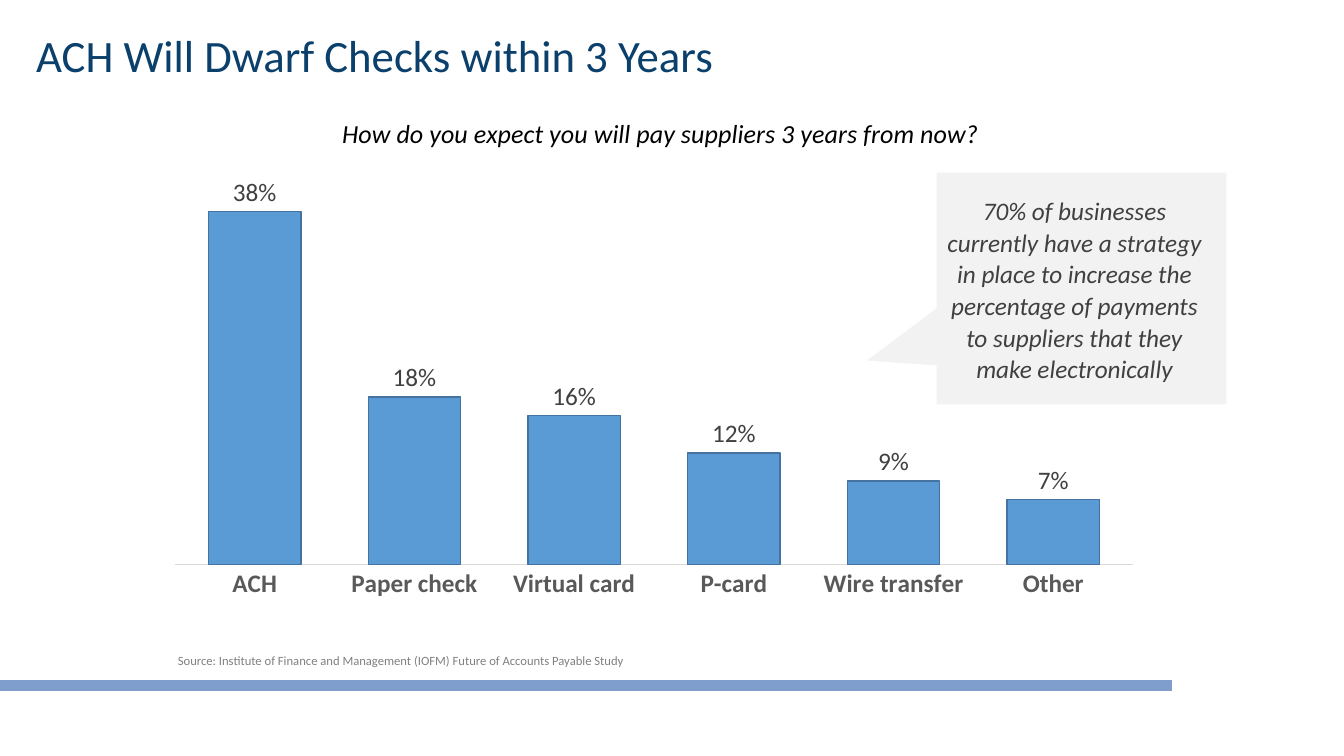
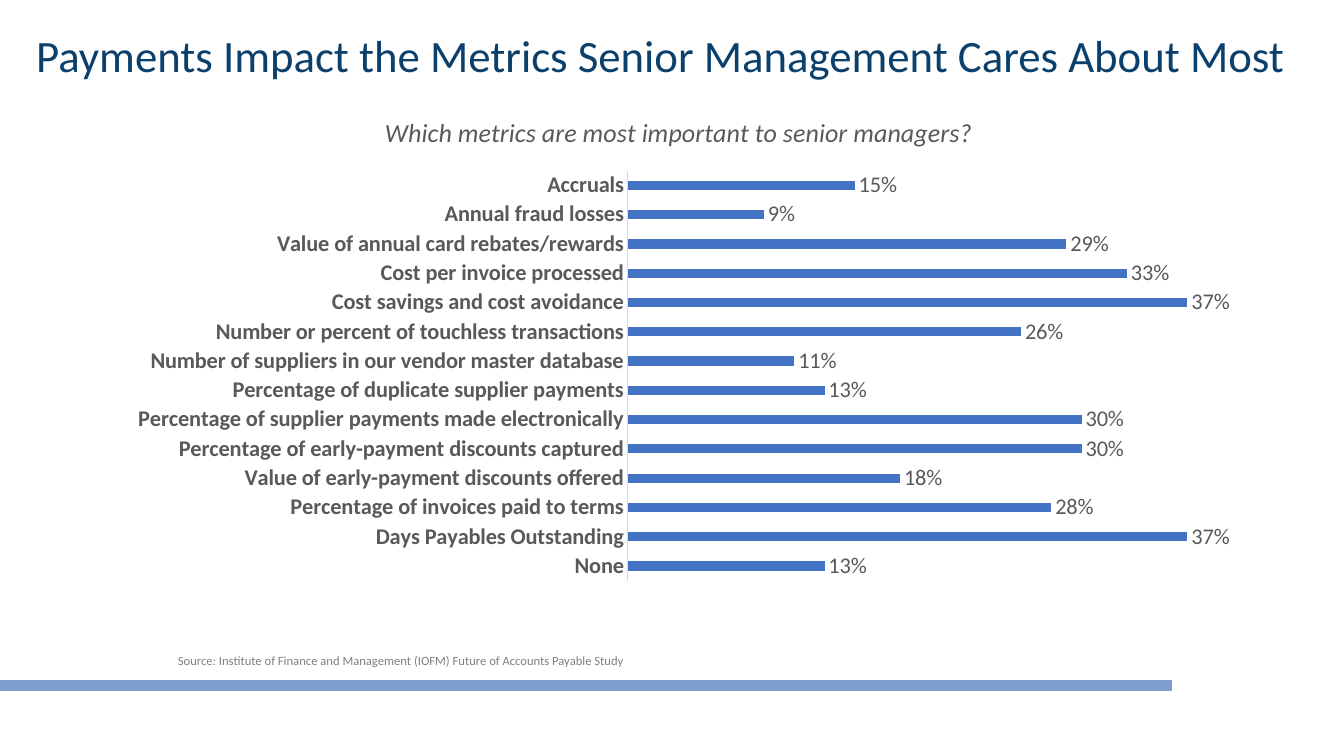
from dataclasses import dataclass

from lxml import etree
from pptx import Presentation, util as u
from pptx.chart.data import CategoryChartData
from pptx.dml.color import RGBColor
from pptx.enum import chart as ch, shapes, text
from pptx.oxml.ns import qn


@dataclass(frozen=True)
class Theme:
    font: str = "Calibri"
    navy: str = "0A406B"
    band: str = "809ECD"
    black: str = "000000"
    dark: str = "404040"
    gray: str = "595959"
    source: str = "808080"
    axis: str = "D9D9D9"
    panel: str = "F2F2F2"
    white: str = "FFFFFF"
    sky: str = "5B9BD5"
    sky_edge: str = "43739E"
    blue: str = "4472C4"
    title_size: float = 32
    question_size: float = 18.6
    body_size: float = 18
    label_size: float = 16
    chart_size: float = 10
    source_size: float = 9


THEME = Theme()
SLIDE_W, SLIDE_H = 1344, 756
SCALE = u.Inches(13.333333) / SLIDE_W
SOURCE = ("Source: Institute of Finance and Management (IOFM) "
          "Future of Accounts Payable Study")


def px(*lengths):
    """Turn pixel lengths into EMU."""
    return [u.Emu(round(length * SCALE)) for length in lengths]


def style(font, size, color, bold=False, italic=False):
    font.name = THEME.font
    font.size = u.Pt(size)
    font.bold = bold
    font.italic = italic
    font.color.rgb = RGBColor.from_string(color)


# Each plot box is x, y, w, h as shares of the chart; a question spot is x, y.
pages = [
    dict(
        title="ACH Will Dwarf Checks within 3 Years",
        question="How do you expect you will pay suppliers 3 years from now?",
        question_color=THEME.black,
        question_spot=dict(x=0.18, y=0.04),
        kind=ch.XL_CHART_TYPE.COLUMN_CLUSTERED,
        box=(159, 89, 991, 538),
        plot=dict(x=0.016, y=0.193, w=0.967, h=0.691),
        gap=73, overlap=-27,
        fill=THEME.sky, edge=THEME.sky_edge,
        size=THEME.body_size, value_color=THEME.dark,
        answers={"ACH": 0.38, "Paper check": 0.18, "Virtual card": 0.16,
                 "P-card": 0.12, "Wire transfer": 0.09, "Other": 0.07},
        callout="70% of businesses currently have a strategy in place to "
                "increase the percentage of payments to suppliers that they "
                "make electronically",
    ),
    dict(
        title="Payments Impact the Metrics Senior Management Cares About Most",
        question="Which metrics are most important to senior managers?",
        question_color=THEME.gray,
        question_spot=dict(x=0.27, y=0.04),
        kind=ch.XL_CHART_TYPE.BAR_CLUSTERED,
        box=(37, 89, 1271, 508),
        plot=dict(x=0.465, y=0.161, w=0.476, h=0.807),
        gap=219, overlap=0,
        fill=THEME.blue, edge=None,
        size=THEME.label_size, value_color=THEME.gray,
        answers={
            "None": 0.13,
            "Days Payables Outstanding": 0.37,
            "Percentage of invoices paid to terms": 0.28,
            "Value of early-payment discounts offered": 0.18,
            "Percentage of early-payment discounts captured": 0.30,
            "Percentage of supplier payments made electronically": 0.30,
            "Percentage of duplicate supplier payments": 0.13,
            "Number of suppliers in our vendor master database": 0.11,
            "Number or percent of touchless transactions": 0.26,
            "Cost savings and cost avoidance": 0.37,
            "Cost per invoice processed": 0.33,
            "Value of annual card rebates/rewards": 0.29,
            "Annual fraud losses": 0.09,
            "Accruals": 0.15,
        },
        callout=None,
    ),
]

prs = Presentation()
prs.slide_width, prs.slide_height = px(SLIDE_W, SLIDE_H)
layout = prs.slide_layouts.get_by_name("Title Only")
band = None

for page in pages:
    slide = prs.slides.add_slide(layout)

    # The band is drawn once, then moved to the layout that all slides share.
    if band is None:
        band = slide.shapes.add_shape(
            shapes.MSO_SHAPE.RECTANGLE, *px(0, 680, 1172, 11))
        band.shadow.inherit = False
        band.fill.solid()
        band.fill.fore_color.rgb = RGBColor.from_string(THEME.band)
        band.line.fill.background()
        layout.shapes._spTree.append(band._element)

    heading = slide.shapes.title
    heading.left, heading.top, heading.width, heading.height = px(26, 28, 1299, 60)
    heading.text_frame.text = page["title"]
    heading.text_frame.auto_size = text.MSO_AUTO_SIZE.NONE
    heading.text_frame.vertical_anchor = text.MSO_ANCHOR.MIDDLE
    line = heading.text_frame.paragraphs[0]
    line.alignment = text.PP_ALIGN.LEFT
    line.line_spacing = 0.9
    style(line.runs[0].font, THEME.title_size, THEME.navy)

    survey = CategoryChartData(number_format="0%")
    survey.categories = list(page["answers"])
    survey.add_series("Series 1", list(page["answers"].values()))
    chart = slide.shapes.add_chart(page["kind"], *px(*page["box"]), survey).chart
    style(chart.font, THEME.chart_size, THEME.black)
    chart.has_legend = False

    question = chart.chart_title
    question.text_frame.text = page["question"]
    style(question.text_frame.paragraphs[0].runs[0].font,
          THEME.question_size, page["question_color"], italic=True)

    bars = chart.plots[0]
    bars.vary_by_categories = False
    bars.gap_width = page["gap"]
    bars.overlap = page["overlap"]
    series = bars.series[0]
    series.format.fill.solid()
    series.format.fill.fore_color.rgb = RGBColor.from_string(page["fill"])
    if page["edge"]:
        series.format.line.color.rgb = RGBColor.from_string(page["edge"])
        series.format.line.width = u.Pt(1)

    bars.has_data_labels = True
    labels = bars.data_labels
    labels.show_value = True
    labels.position = ch.XL_LABEL_POSITION.OUTSIDE_END
    labels.number_format = "0%"
    labels.number_format_is_linked = False
    style(labels.font, page["size"], page["value_color"])

    categories = chart.category_axis
    categories.major_tick_mark = ch.XL_TICK_MARK.NONE
    categories.format.line.color.rgb = RGBColor.from_string(THEME.axis)
    categories.format.line.width = u.Pt(0.75)
    style(categories.tick_labels.font, page["size"], THEME.gray, bold=True)
    shares = chart.value_axis
    shares.minimum_scale, shares.maximum_scale = 0, 0.4
    shares.has_major_gridlines = False
    shares.visible = False

    # Fixed places for the question and the plot need layout elements.
    plot_area = chart._chartSpace.find(".//" + qn("c:plotArea"))
    for parent, index, place in ((question._element, 1, page["question_spot"]),
                                 (plot_area, 0, page["plot"])):
        for old in parent.findall(qn("c:layout")):
            parent.remove(old)
        spot = etree.Element(qn("c:layout"))
        parent.insert(index, spot)
        manual = etree.SubElement(spot, qn("c:manualLayout"))
        settings = {"xMode": "edge", "yMode": "edge", **place}
        if "w" in place:
            settings = {"layoutTarget": "inner", **settings}
        for key, value in settings.items():
            etree.SubElement(manual, qn("c:" + key)).set("val", str(value))

    credit = slide.shapes.add_textbox(*px(168, 648, 531, 25)).text_frame
    credit.word_wrap = True
    credit.text = SOURCE
    style(credit.paragraphs[0].runs[0].font, THEME.source_size, THEME.source)

    if page["callout"]:
        callout = slide.shapes.add_shape(
            shapes.MSO_SHAPE.RECTANGULAR_CALLOUT, *px(936, 172, 291, 233))
        callout.adjustments[0], callout.adjustments[1] = -0.745, 0.312
        callout.shadow.inherit = False
        callout.fill.solid()
        callout.fill.fore_color.rgb = RGBColor.from_string(THEME.panel)
        callout.line.color.rgb = RGBColor.from_string(THEME.white)
        callout.line.width = u.Pt(1)
        remark = callout.text_frame
        remark.word_wrap = True
        remark.vertical_anchor = text.MSO_ANCHOR.TOP
        (remark.margin_left, remark.margin_top,
         remark.margin_right, remark.margin_bottom) = px(10, 22, 24, 5)
        remark.text = page["callout"]
        line = remark.paragraphs[0]
        line.alignment = text.PP_ALIGN.CENTER
        line.line_spacing = u.Pt(22.6)
        style(line.runs[0].font, THEME.body_size, THEME.dark, italic=True)

prs.save("out.pptx")
